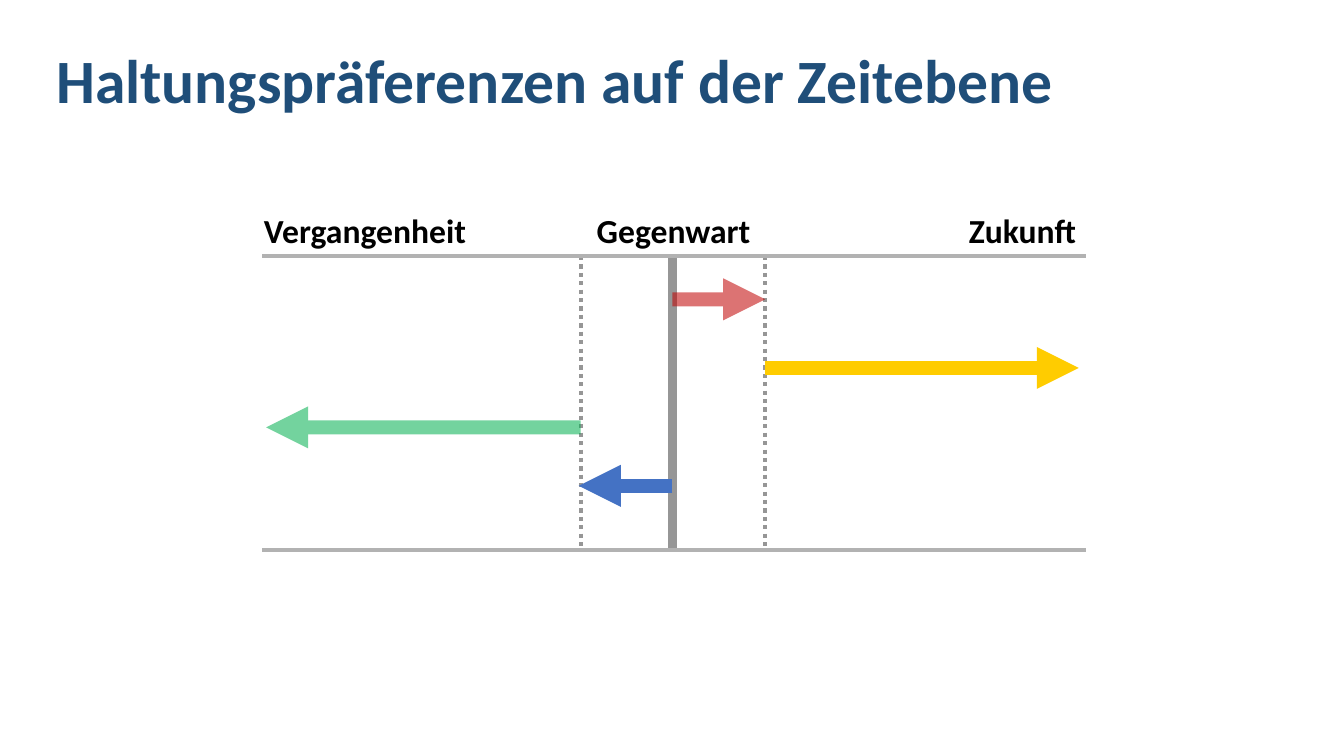
from lxml.etree import SubElement
from pptx import Presentation
from pptx.dml.color import RGBColor
from pptx.enum.dml import MSO_LINE
from pptx.enum.shapes import MSO_CONNECTOR
from pptx.enum.text import MSO_ANCHOR, PP_ALIGN
from pptx.oxml.ns import qn
from pptx.util import Inches, Pt


def paint(code):
    return RGBColor.from_string(code)


class Chart:
    """Holds the font and the current slide and draws its elements."""

    def __init__(self, slide, font):
        self.slide = slide
        self.font = font

    def text(self, words, box, size, color, align=PP_ALIGN.LEFT, space=1.0):
        frame = self.slide.shapes.add_textbox(*map(Inches, box)).text_frame
        frame.word_wrap = True
        frame.vertical_anchor = MSO_ANCHOR.TOP
        para = frame.paragraphs[0]
        para.alignment = align
        para.line_spacing = space
        run = para.add_run()
        run.text = words
        run.font.name = self.font
        run.font.size = Pt(size)
        run.font.bold = True
        run.font.color.rgb = paint(color)

    def line(self, start, end, color, width, dash=None):
        link = self.slide.shapes.add_connector(
            MSO_CONNECTOR.STRAIGHT, *map(Inches, (*start, *end)))
        link.line.color.rgb = paint(color)
        link.line.width = Pt(width)
        if dash:
            link.line.dash_style = dash
        SubElement(link._element.spPr, qn("a:effectLst"))
        return link

    def arrow(self, start, end, color, alpha=100):
        link = self.line(start, end, color, 10)
        stroke = link.line._get_or_add_ln()
        if alpha < 100:
            tint = stroke.find(".//" + qn("a:srgbClr"))
            SubElement(tint, qn("a:alpha"), val=str(alpha * 1000))
        SubElement(stroke, qn("a:tailEnd"), type="triangle")


def main():
    deck = Presentation()
    deck.slide_width, deck.slide_height = Inches(13.33), Inches(7.5)
    chart = Chart(deck.slides.add_slide(deck.slide_layouts[6]), "Calibri")

    left, right, top, base = 2.6, 10.77, 2.54, 5.46
    past, now, next_up = 5.76, 6.67, 7.59

    chart.text("Haltungspräferenzen auf der Zeitebene",
               (0.46, 0.45, 11.5, 1.45), 44, "1F4E79", space=0.9)
    for words, x, align in (("Vergangenheit", 2.52, PP_ALIGN.LEFT),
                            ("Gegenwart", 5.56, PP_ALIGN.CENTER),
                            ("Zukunft", 8.53, PP_ALIGN.RIGHT)):
        chart.text(words, (x, 2.03, 2.24, 0.5), 24, "000000", align)

    chart.line((now, top), (now, base), "969696", 6)
    for x in (past, next_up):
        chart.line((x, top), (x, base), "969696", 3, MSO_LINE.ROUND_DOT)

    for x, tip, y, color, alpha in ((now, next_up, 2.97, "C00000", 54),
                                    (next_up, 10.7, 3.65, "FFCC00", 100),
                                    (past, 2.64, 4.24, "00B050", 55),
                                    (now, 5.74, 4.82, "4472C4", 100)):
        chart.arrow((x, y), (tip, y), color, alpha)

    for y in (top, base):
        chart.line((left, y), (right, y), "B2B2B2", 3)

    deck.save("out.pptx")


if __name__ == "__main__":
    main()
